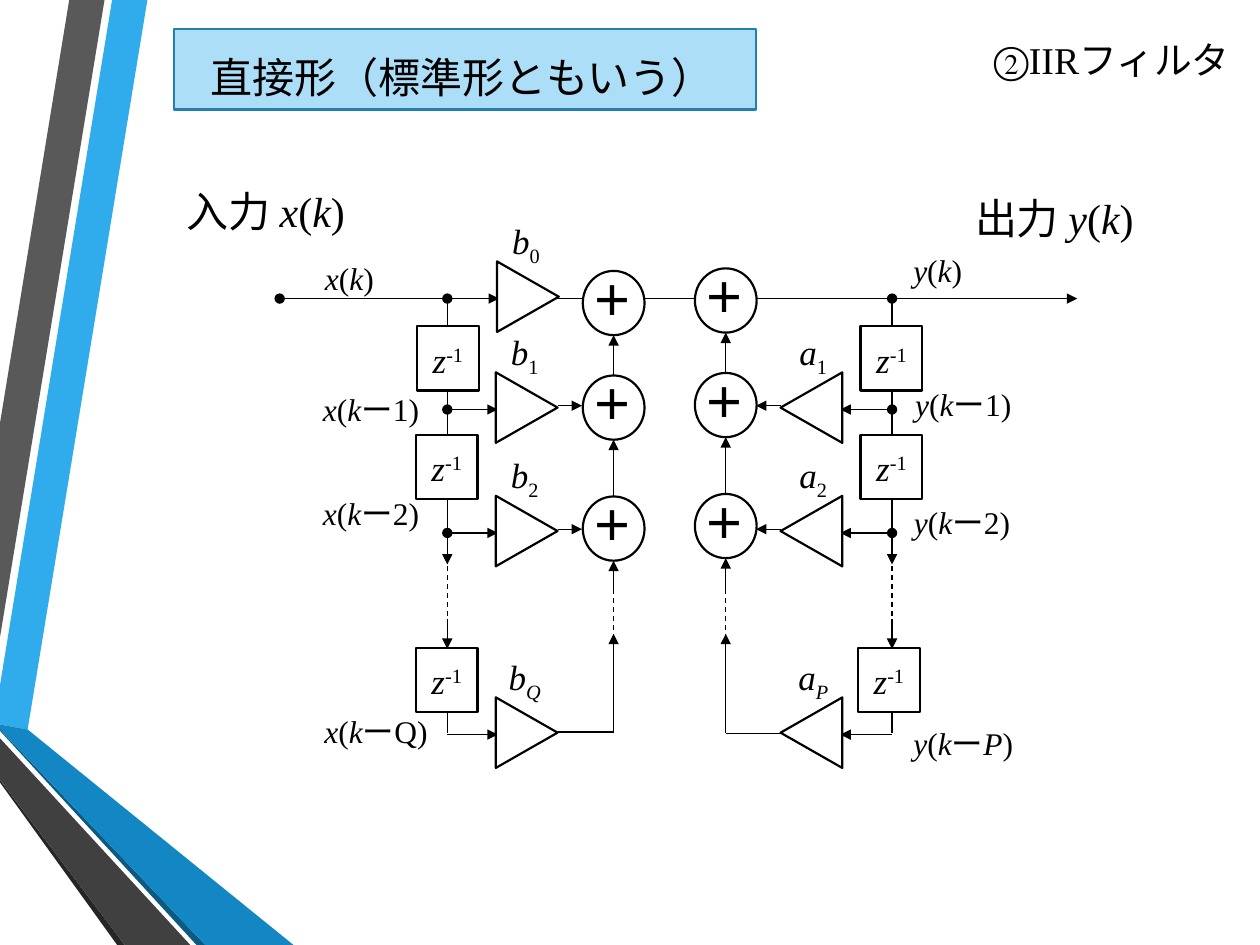
"""Build a slide showing the direct-form block diagram of an IIR filter."""
from dataclasses import dataclass
from itertools import groupby

from lxml.etree import SubElement
from pptx import Presentation
from pptx.dml.color import RGBColor
from pptx.enum.dml import MSO_LINE_DASH_STYLE as DASH
from pptx.enum.shapes import MSO_CONNECTOR as CONN, MSO_SHAPE as SHAPE
from pptx.enum.text import MSO_ANCHOR as ANCHOR, PP_ALIGN as ALIGN
from pptx.oxml.ns import qn
from pptx.util import Inches, Pt


@dataclass(frozen=True)
class Theme:
    ink: str = "000000"
    paper: str = "FFFFFF"
    banner: str = "ACDEF7"
    banner_line: str = "247FAF"
    font: str = "Times New Roman"
    plus_font: str = "Cabin"
    heading: float = 24
    title: float = 21.6
    symbol: float = 20
    label: float = 18
    thin: float = 0.75
    outline: float = 1.25


@dataclass(frozen=True)
class Side:
    name: str
    bus: float
    delay_lefts: tuple
    gain_left: float
    label_left: float
    gain_in: float
    gain_out: float
    sum_in: float
    sum_x: float
    sum_tops: tuple
    corner_y: float
    gains: tuple


T = Theme()
NODE_W, NODE_H = 0.49, 0.51
GAIN_W, GAIN_H = 0.56, 0.49
MAIN_Y = 2.37
TAP_YS = (3.25, 4.23, 5.83)
DELAY_TOPS = (2.59, 3.45, 5.14)
SIDES = (
    Side("x", 3.55, (3.31, 3.3, 3.3), 3.9, 3.95, 3.95, 4.43, 4.62, 4.87,
         (2.15, 2.98, 3.94), 5.81, ("*b*_1", "*b*_2", "*b_Q*")),
    Side("y", 7.08, (6.83, 6.83, 6.81), 6.16, 6.24, 6.67, 6.2, 6.0, 5.76,
         (2.13, 2.96, 3.92), 5.82, ("*a*_1", "*a*_2", "*a_P*")),
)
SIGNALS = (
    ("*x*(*k*)", 2.48, 2.01, 1.14, ALIGN.LEFT),
    ("*x*(*k*ー1)", 2.23, 3.05, 1.43, ALIGN.CENTER),
    ("*x*(*k*ー2)", 2.23, 3.87, 1.43, ALIGN.CENTER),
    ("*x*(*k*ーQ)", 2.27, 5.6, 1.43, ALIGN.CENTER),
    ("*y*(*k*)", 7.15, 1.94, 1.14, ALIGN.LEFT),
    ("*y*(*k*ー1)", 6.93, 3.01, 1.43, ALIGN.CENTER),
    ("*y*(*k*ー2)", 6.92, 3.94, 1.43, ALIGN.CENTER),
    ("*y*(*k*ー*P*)", 6.93, 5.7, 1.43, ALIGN.CENTER),
)
RIBBONS = (
    ("30ACEC", ((0, 5.44), (0, 5.75), (0.22, 5.79), (1.17, 0), (0.89, 0))),
    ("595959", ((0.83, 0), (0.55, 0), (0, 3.36), (0, 5.06))),
    ("262626", ((0, 6.19), (0, 6.21), (0.93, 7.5), (0.99, 7.5))),
    ("0C5A82", ((0, 5.79), (0, 5.8), (1.56, 7.5), (1.63, 7.5))),
    ("1287C3", ((0, 5.79), (1.63, 7.5), (2.33, 7.5), (0.22, 5.79), (0, 5.75))),
    ("404040", ((0, 6.19), (0.99, 7.5), (1.51, 7.5), (0, 5.86))),
)


def parse_marks(text):
    """Yield (text, italic, baseline) runs; * toggles italic, ^ and _ shift the rest."""
    italic, base, chars = False, 0, []
    for ch in text:
        if ch == "*":
            italic = not italic
        elif ch in "^_":
            base = 30 if ch == "^" else -25
        else:
            chars.append((ch, italic, base))
    for (italic, base), run in groupby(chars, key=lambda c: c[1:]):
        yield "".join(c[0] for c in run), italic, base


def write(sp, text, size, align=ALIGN.LEFT, font=T.font, bold=False,
          anchor=ANCHOR.TOP, spacing=None, insets=None):
    """Fill a shape with one formatted paragraph and return the paragraph."""
    tf = sp.text_frame
    tf.word_wrap = True
    tf.vertical_anchor = anchor
    if insets:
        tf.margin_left, tf.margin_top, tf.margin_right, tf.margin_bottom = map(Inches, insets)
    p = tf.paragraphs[0]
    p.alignment = align
    if spacing:
        p.line_spacing = Pt(spacing)
    for part, italic, base in parse_marks(text):
        r = p.add_run()
        r.text = part
        r.font.name, r.font.size = font, Pt(size)
        r.font.bold, r.font.italic = bold, italic
        r.font.color.rgb = RGBColor.from_string(T.ink)
        if base:
            r.font._element.set("baseline", str(base * 1000))
    return p


def add_label(shapes, text, x, y, w, h, size, **fmt):
    """Add a text box."""
    return write(shapes.add_textbox(*map(Inches, (x, y, w, h))), text, size, **fmt)


def add_block(shapes, kind, x, y, w, h, fill=T.paper, line=T.ink):
    """Add an outlined preset shape."""
    sp = shapes.add_shape(kind, *map(Inches, (x, y, w, h)))
    sp.shadow.inherit = False
    sp.fill.solid()
    sp.fill.fore_color.rgb = RGBColor.from_string(fill)
    sp.line.color.rgb = RGBColor.from_string(line)
    sp.line.width = Pt(T.outline)
    return sp


def add_wire(shapes, x1, y1, x2, y2, head=None, tail=None, dashed=False):
    """Add a straight connector with optional end marks."""
    cx = shapes.add_connector(CONN.STRAIGHT, *map(Inches, (x1, y1, x2, y2)))
    cx.line.color.rgb = RGBColor.from_string(T.ink)
    cx.line.width = Pt(T.thin)
    if dashed:
        cx.line.dash_style = DASH.DASH
    ln = cx.line._get_or_add_ln()
    for tag, mark in (("a:headEnd", head), ("a:tailEnd", tail)):
        if mark:
            SubElement(ln, qn(tag)).set("type", mark)
    SubElement(cx._element.spPr, qn("a:effectLst"))


def add_ribbon(shapes, color, points):
    """Add one filled polygon of the side decoration."""
    pts = [(Inches(x), Inches(y)) for x, y in points]
    builder = shapes.build_freeform(*pts[0])
    builder.add_line_segments(pts[1:], close=True)
    sp = builder.convert_to_shape()
    sp.shadow.inherit = False
    sp.fill.solid()
    sp.fill.fore_color.rgb = RGBColor.from_string(color)
    sp.line.fill.background()


def add_gain(shapes, text, x, label_x, tap_y, rotation):
    """Add a gain triangle and its coefficient above it."""
    top = tap_y - 0.26
    add_block(shapes, SHAPE.ISOSCELES_TRIANGLE, x, top, GAIN_W, GAIN_H).rotation = rotation
    add_label(shapes, text, label_x, top - 0.31, 0.43, 0.42, T.symbol, align=ALIGN.CENTER,
              anchor=ANCHOR.MIDDLE, spacing=16, insets=(0, 0, 0, 0))


def add_node(shapes, kind, text, x, y, size, **fmt):
    """Add a delay box or an adder circle."""
    sp = add_block(shapes, kind, x, y, NODE_W, NODE_H)
    write(sp, text, size, anchor=ANCHOR.MIDDLE, spacing=16, insets=(0, 0.12, 0, 0), **fmt)


def add_side(shapes, s):
    """Add the delay line, gains and adders of one side."""
    add_wire(shapes, s.bus, MAIN_Y, s.bus, 4.48, head="oval", tail="triangle")
    add_wire(shapes, s.bus, 4.35, s.bus, 4.98, dashed=True)
    add_wire(shapes, s.bus, 4.91, s.bus, 5.15, tail="triangle")
    add_wire(shapes, s.bus, 5.23, s.bus, 5.82)
    for x, y in zip(s.delay_lefts, DELAY_TOPS):
        add_node(shapes, SHAPE.RECTANGLE, "*z*^-1", x, y, T.symbol, align=ALIGN.CENTER)
    rotation = 90 if s.sum_x > s.bus else 270
    for text, y in zip(s.gains, TAP_YS):
        last = y == TAP_YS[-1]
        add_wire(shapes, s.bus, y, s.gain_in, y, head=None if last else "oval", tail="triangle")
        add_gain(shapes, text, s.gain_left, s.label_left, y, rotation)
        if not last:
            add_wire(shapes, s.gain_out, y - 0.03, s.sum_in, y - 0.03, tail="triangle")
    add_wire(shapes, s.gain_out, s.corner_y, s.sum_x, s.corner_y)
    add_wire(shapes, s.sum_x, 5.03, s.sum_x, s.corner_y, head="triangle")
    add_wire(shapes, s.sum_x, 4.53, s.sum_x, 5.16, dashed=True)
    for top, below in zip(s.sum_tops, s.sum_tops[1:] + (4.68,)):
        add_wire(shapes, s.sum_x, below, s.sum_x, top + NODE_H, tail="triangle")
        add_node(shapes, SHAPE.OVAL, "＋", s.sum_x - NODE_W / 2, top, T.heading,
                 align=ALIGN.JUSTIFY, font=T.plus_font, bold=True)


def add_headings(slide):
    """Add the title, the banner and the input and output captions."""
    shapes = slide.shapes
    add_block(shapes, SHAPE.RECTANGLE, 1.38, 0.23, 4.62, 0.64, T.banner, T.banner_line)
    p = add_label(shapes, "直接形（標準形ともいう）", 1.56, 0.29, 4.21, 0.55, T.heading,
                  align=ALIGN.CENTER, spacing=33.6)
    p.space_before = p.space_after = Pt(6)
    title = shapes.title
    title.left, title.top, title.width, title.height = map(Inches, (3.7, 0.23, 6.16, 0.49))
    write(title, "②IIRフィルタ", T.title, align=ALIGN.RIGHT, anchor=ANCHOR.MIDDLE)
    add_label(shapes, "出力 *y*(*k*)", 7.64, 1.48, 1.76, 0.5, T.heading)
    add_label(shapes, "入力 *x*(*k*)", 1.38, 1.42, 1.76, 0.5, T.heading)


def main():
    """Assemble and save the slide."""
    prs = Presentation()
    prs.slide_width, prs.slide_height = Inches(10), Inches(7.5)
    slide = prs.slides.add_slide(prs.slide_layouts[5])
    for color, points in RIBBONS:
        add_ribbon(slide.shapes, color, points)
    add_headings(slide)
    diagram = slide.shapes.add_group_shape().shapes
    add_wire(diagram, 2.22, MAIN_Y, 8.55, MAIN_Y, head="oval", tail="triangle")
    add_wire(diagram, 3.56, MAIN_Y, 3.96, MAIN_Y, tail="triangle")
    add_gain(diagram, "*b*_0", 3.91, 3.96, MAIN_Y, 90)
    for side in SIDES:
        add_side(diagram, side)
    for text, x, y, w, align in SIGNALS:
        add_label(diagram, text, x, y, w, 0.4, T.label, align=align)
    prs.save("out.pptx")


if __name__ == "__main__":
    main()
